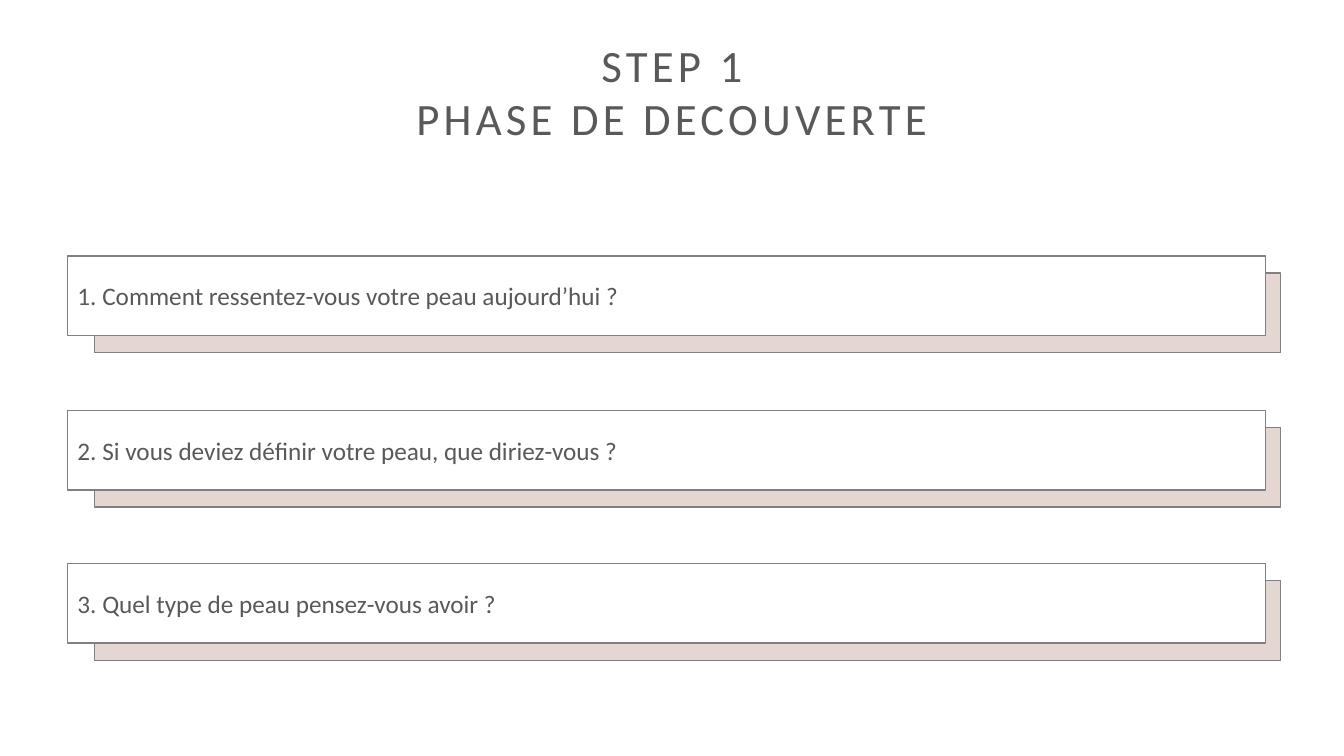
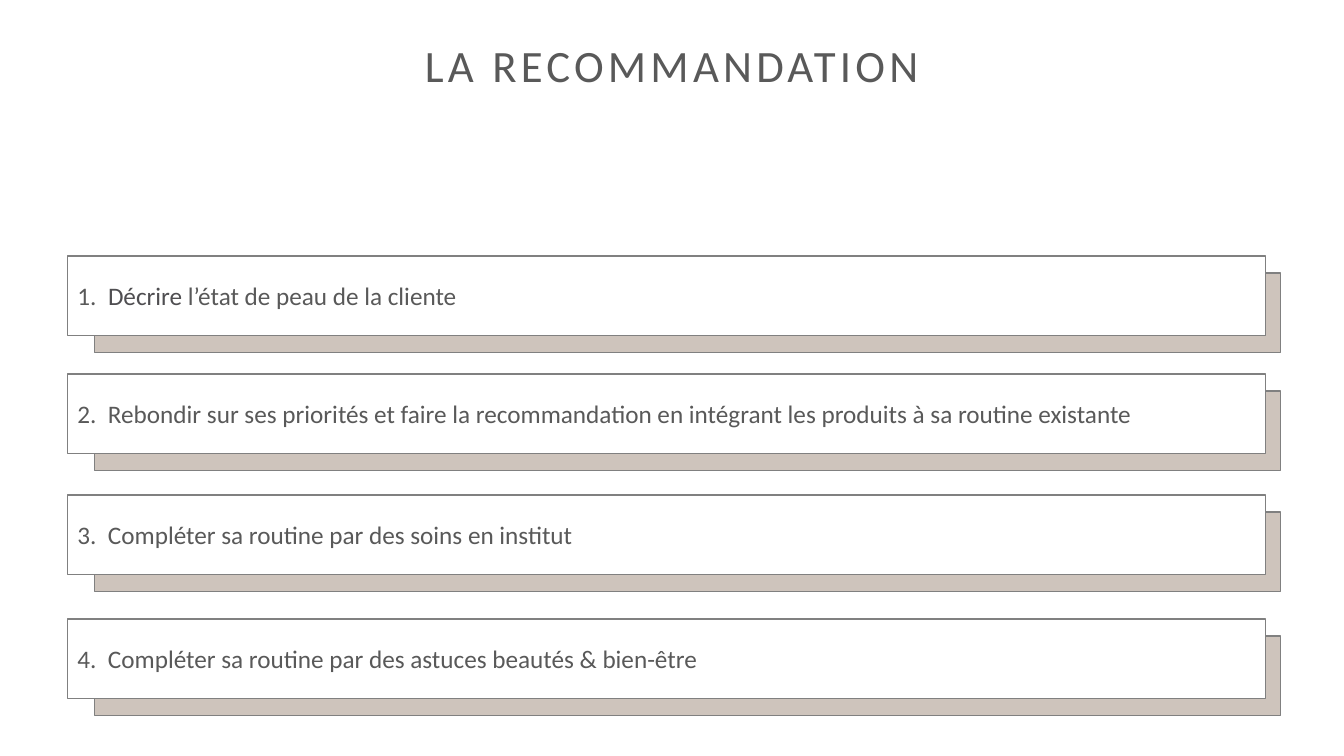
from dataclasses import dataclass

from pptx import Presentation
from pptx.dml.color import RGBColor
from pptx.enum import shapes, text
from pptx.util import Inches, Pt

WHITE = RGBColor(0xFF, 0xFF, 0xFF)
BORDER_GRAY = RGBColor(0x80, 0x80, 0x80)
TEXT_GRAY = RGBColor(0x59, 0x59, 0x59)
DARK_GRAY = RGBColor(0x4F, 0x4E, 0x51)
ROSE = RGBColor(0xE4, 0xD6, 0xD0)
TAUPE = RGBColor(0xCE, 0xC4, 0xBC)

BODY_FORMAT = {"name": "Calibri", "size": Pt(18)}
TITLE_FORMAT = {"name": "Calibri", "size": Pt(32)}
TITLE_TRACKING = "300"
CARD_LEFT, CARD_WIDTH, CARD_HEIGHT = 0.67, 11.88, 0.79
BACKING_LEFT, BACKING_WIDTH, BACKING_DROP = 0.94, 11.76, 0.17


@dataclass(frozen=True)
class Phrase:
    wording: str
    color: RGBColor = TEXT_GRAY


@dataclass(frozen=True)
class Card:
    top: float
    phrases: tuple[Phrase, ...]


@dataclass(frozen=True)
class Step:
    title_lines: tuple[str, ...]
    title_height: float
    backing_color: RGBColor
    cards: tuple[Card, ...]


STEPS = (
    Step(
        ("STEP 1", "PHASE DE DECOUVERTE"), 1.72, ROSE,
        (
            Card(2.54, (Phrase("1. Comment ressentez-vous votre peau aujourd’hui ?"),)),
            Card(4.07, (Phrase("2. Si vous deviez définir votre peau, que diriez-vous ?"),)),
            Card(5.59, (Phrase("3. Quel type de peau pensez-vous avoir ?"),)),
        ),
    ),
    Step(
        ("LA RECOMMANDATION",), 1.18, TAUPE,
        (
            Card(2.54, (
                Phrase("1.  "),
                Phrase("Décrire", DARK_GRAY),
                Phrase(" l’état de peau de la cliente"),
            )),
            Card(3.71, (Phrase(
                "2.  Rebondir sur ses priorités et faire la recommandation "
                "en intégrant les produits à sa routine existante"),)),
            Card(4.91, (Phrase("3.  Compléter sa routine par des soins en institut"),)),
            Card(6.14, (Phrase("4.  Compléter sa routine par des astuces beautés & bien-être"),)),
        ),
    ),
)


def add_phrase(paragraph, phrase: Phrase, font_format: dict):
    run = paragraph.add_run()
    run.text = phrase.wording
    for attribute, value in font_format.items():
        setattr(run.font, attribute, value)
    run.font.color.rgb = phrase.color
    return run


def add_title(slide, lines: tuple[str, ...], height: float) -> None:
    title = slide.shapes.add_textbox(Inches(0), Inches(0.32), Inches(13.33), Inches(height))
    frame = title.text_frame
    frame.word_wrap = True
    for index, line in enumerate(lines):
        paragraph = frame.add_paragraph() if index else frame.paragraphs[0]
        paragraph.alignment = text.PP_ALIGN.CENTER
        run = add_phrase(paragraph, Phrase(line), TITLE_FORMAT)
        run.font._element.set("spc", TITLE_TRACKING)


def add_panel(group, left: float, top: float, width: float, fill: RGBColor):
    panel = group.shapes.add_shape(
        shapes.MSO_SHAPE.FLOWCHART_PROCESS,
        Inches(left), Inches(top), Inches(width), Inches(CARD_HEIGHT))
    panel.shadow.inherit = False
    panel.fill.solid()
    panel.fill.fore_color.rgb = fill
    panel.line.color.rgb = BORDER_GRAY
    panel.line.width = Pt(1)
    return panel


def add_card(slide, card: Card, backing_color: RGBColor) -> None:
    group = slide.shapes.add_group_shape()
    add_panel(group, BACKING_LEFT, card.top + BACKING_DROP, BACKING_WIDTH, backing_color)
    front = add_panel(group, CARD_LEFT, card.top, CARD_WIDTH, WHITE)
    frame = front.text_frame
    frame.word_wrap = True
    frame.vertical_anchor = text.MSO_ANCHOR.MIDDLE
    paragraph = frame.paragraphs[0]
    paragraph.alignment = text.PP_ALIGN.LEFT
    for phrase in card.phrases:
        add_phrase(paragraph, phrase, BODY_FORMAT)


def main() -> None:
    deck = Presentation()
    deck.slide_width, deck.slide_height = Inches(13.33), Inches(7.5)
    for step in STEPS:
        slide = deck.slides.add_slide(deck.slide_layouts[6])
        add_title(slide, step.title_lines, step.title_height)
        for card in step.cards:
            add_card(slide, card, step.backing_color)
    deck.save("out.pptx")


if __name__ == "__main__":
    main()
